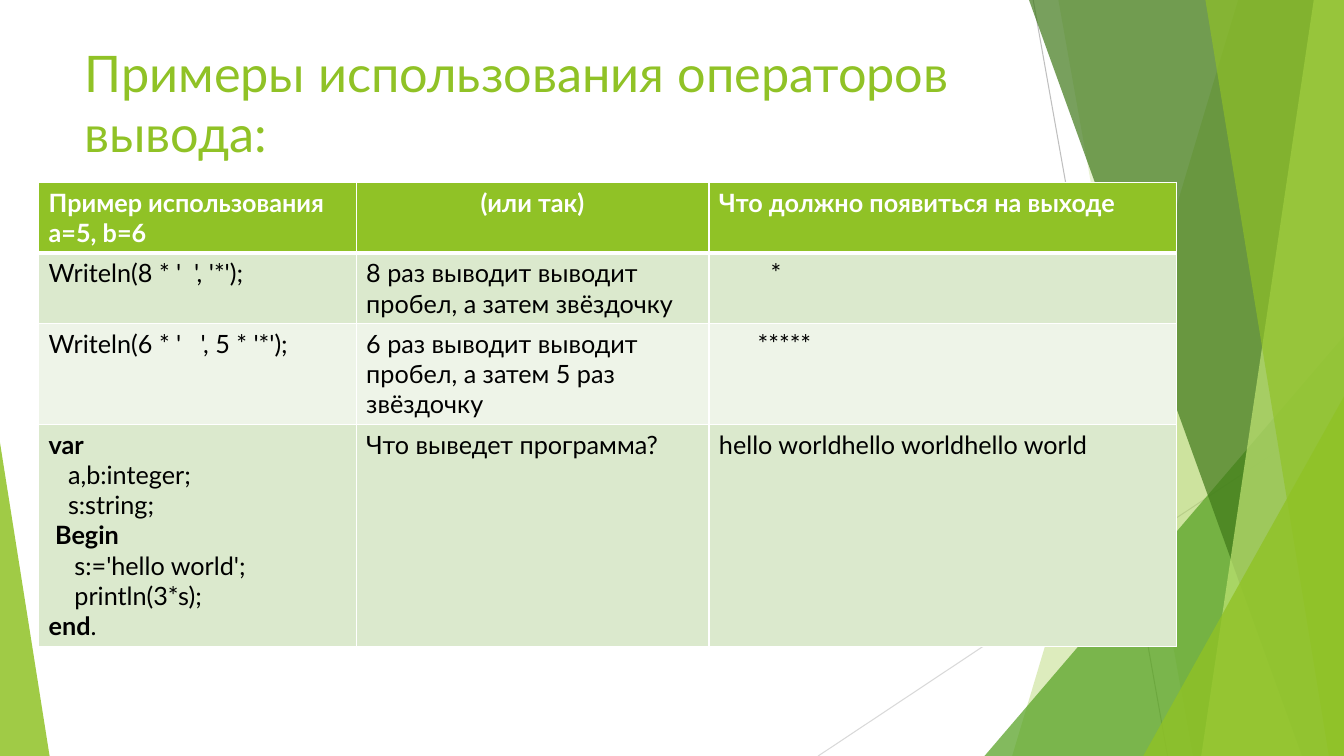
import pptx
import pptx.dml.color
import pptx.enum.shapes
import pptx.enum.text
import pptx.oxml.ns
import pptx.util
from lxml import etree

COLORS = {
    "green": "90C226", "leaf": "54A021", "forest": "3F7819", "lime": "C0E474",
    "silver": "BFBFBF", "mist": "D9D9D9", "white": "FFFFFF", "black": "000000",
    "band": "DBE9CD", "pale": "EEF4E8",
}
COLUMNS, ROWS = 160, 90
SPACE = 4.6  # width in points of one step of code indent


class SlideBuilder:
    """Places styled elements on a grid of COLUMNS by ROWS."""

    def __init__(self, presentation, font):
        self.slide = presentation.slides.add_slide(presentation.slide_layouts[6])
        self.column = presentation.slide_width / COLUMNS
        self.row = presentation.slide_height / ROWS
        self.font = font

    def x(self, columns):
        return pptx.util.Emu(round(columns * self.column))

    def y(self, rows):
        return pptx.util.Emu(round(rows * self.row))

    def box(self, left, top, width, height):
        return self.x(left), self.y(top), self.x(width), self.y(height)

    def color(self, name):
        return pptx.dml.color.RGBColor.from_string(COLORS[name])

    def child(self, parent, tag, **attributes):
        return etree.SubElement(parent, pptx.oxml.ns.qn(tag), attributes)

    def line(self, start, end, color):
        connector = self.slide.shapes.add_connector(
            pptx.enum.shapes.MSO_CONNECTOR.STRAIGHT,
            self.x(start[0]), self.y(start[1]), self.x(end[0]), self.y(end[1]))
        connector.line.color.rgb = self.color(color)
        connector.line.width = pptx.util.Pt(0.75)
        self.child(connector._element.spPr, "a:effectLst")

    def paint(self, shape, color, opacity):
        shape.shadow.inherit = False
        shape.line.fill.background()
        shape.fill.solid()
        shape.fill.fore_color.rgb = self.color(color)
        tint = shape._element.spPr.find(".//" + pptx.oxml.ns.qn("a:srgbClr"))
        self.child(tint, "a:alpha", val=str(opacity * 1000))

    def ribbon(self, top_left, bottom_left, color, opacity):
        """A band that runs from a slanted left edge to the slide's right edge."""
        corners = [(top_left, 0), (COLUMNS, 0), (COLUMNS, ROWS), (bottom_left, ROWS)]
        points = [(self.x(x), self.y(y)) for x, y in corners]
        builder = self.slide.shapes.build_freeform(*points[0])
        builder.add_line_segments(points[1:], close=True)
        self.paint(builder.convert_to_shape(), color, opacity)

    def triangle(self, left, top, width, apex, color, opacity):
        """A triangle that stands on the slide's bottom edge."""
        shape = self.slide.shapes.add_shape(
            pptx.enum.shapes.MSO_SHAPE.ISOSCELES_TRIANGLE,
            *self.box(left, top, width, ROWS - top))
        shape.adjustments[0] = apex
        self.paint(shape, color, opacity)

    def run(self, paragraph, text, size, color, bold=False):
        run = paragraph.add_run()
        run.text = text
        run.font.name = self.font
        run.font.size = pptx.util.Pt(size)
        run.font.bold = bold
        run.font.color.rgb = self.color(color)

    def title(self, text, box):
        frame = self.slide.shapes.add_textbox(*self.box(*box)).text_frame
        frame.word_wrap = True
        frame.vertical_anchor = pptx.enum.text.MSO_ANCHOR.TOP
        self.run(frame.paragraphs[0], text, 36, "green")

    def cell(self, cell, lines, fill, color, borders):
        for index, (indent, runs) in enumerate(lines):
            frame = cell.text_frame
            paragraph = frame.add_paragraph() if index else frame.paragraphs[0]
            if indent:
                margin = pptx.util.Pt(indent * SPACE)
                paragraph._p.get_or_add_pPr().set("marL", str(margin))
            for text, bold in runs:
                self.run(paragraph, text, 18, color, bold)
        properties = cell._tc.get_or_add_tcPr()
        for side, width in borders.items():
            edge = self.child(properties, "a:ln" + side, w=str(pptx.util.Pt(width)))
            solid = self.child(edge, "a:solidFill")
            self.child(solid, "a:srgbClr", val=COLORS["white"])
        cell.fill.solid()
        cell.fill.fore_color.rgb = self.color(fill)

    def table(self, left, top, widths, heights, content):
        frame = self.slide.shapes.add_table(
            len(heights), len(widths), *self.box(left, top, sum(widths), sum(heights)))
        table = frame.table
        table.horz_banding = False
        for column, width in zip(table.columns, widths):
            column.width = self.x(width)
        for row, height in zip(table.rows, heights):
            row.height = self.y(height)
        for i, cells in enumerate(content):
            fill = "green" if i == 0 else ("band" if i % 2 else "pale")
            color = "black" if i else "white"
            borders = {"L": 1, "R": 1, "T": 3 if i == 1 else 1, "B": 1 if i else 3}
            for j, lines in enumerate(cells):
                self.cell(table.cell(i, j), lines, fill, color, borders)
        return table


def plain(text, indent=0):
    return indent, [(text, False)]


def strong(text, indent=0):
    return indent, [(text, True)]


def main():
    presentation = pptx.Presentation()
    presentation.slide_width = pptx.util.Inches(13.33)
    presentation.slide_height = pptx.util.Inches(7.5)
    builder = SlideBuilder(presentation, "Lato")

    # Background facets
    builder.line((123, 0), (139, 90), "silver")
    builder.line((160, 48.4), (97.4, 90), "mist")
    builder.ribbon(147.4, 120.5, "green", 30)
    builder.ribbon(126, 142, "green", 20)
    builder.triangle(117.2, 40, 42.8, 1, "leaf", 72)
    builder.ribbon(122.5, 155, "forest", 70)
    builder.ribbon(156.4, 143, "lime", 70)
    builder.ribbon(143.5, 158.2, "green", 65)
    builder.triangle(136.1, 47.2, 23.9, 1, "green", 80)
    builder.triangle(0, 52.7, 5.9, 0, "green", 85)

    # Title
    builder.title("Примеры использования операторов вывода:", (8.9, 4.4, 112.8, 17.3))

    # Table of output statements
    program = [
        strong("var"),
        plain("a,b:integer;", 3),
        plain("s:string;", 3),
        strong("Begin", 1),
        plain("s:='hello world';", 4),
        plain("println(3*s);", 4),
        (0, [("end", True), (".", False)]),
    ]
    content = [
        [[strong("Пример использования"), strong("a=5, b=6")],
         [strong("(или так)")],
         [strong("Что должно появиться на выходе")]],
        [[plain("Writeln(8 * '  ', '*');")],
         [plain("8 раз выводит выводит пробел, а затем звёздочку")],
         [plain("*", 8)]],
        [[plain("Writeln(6 * '   ', 5 * '*');")],
         [plain("6 раз выводит выводит пробел, а затем 5 раз звёздочку")],
         [plain("*****", 6)]],
        [program,
         [plain("Что выведет программа?")],
         [plain("hello worldhello worldhello world")]],
    ]
    table = builder.table(4.6, 21.7, [37.8, 42, 55.7], [8.4, 8.4, 12, 26.4], content)
    heading = table.cell(0, 1).text_frame.paragraphs[0]
    heading.alignment = pptx.enum.text.PP_ALIGN.CENTER

    presentation.save("out.pptx")


if __name__ == "__main__":
    main()
